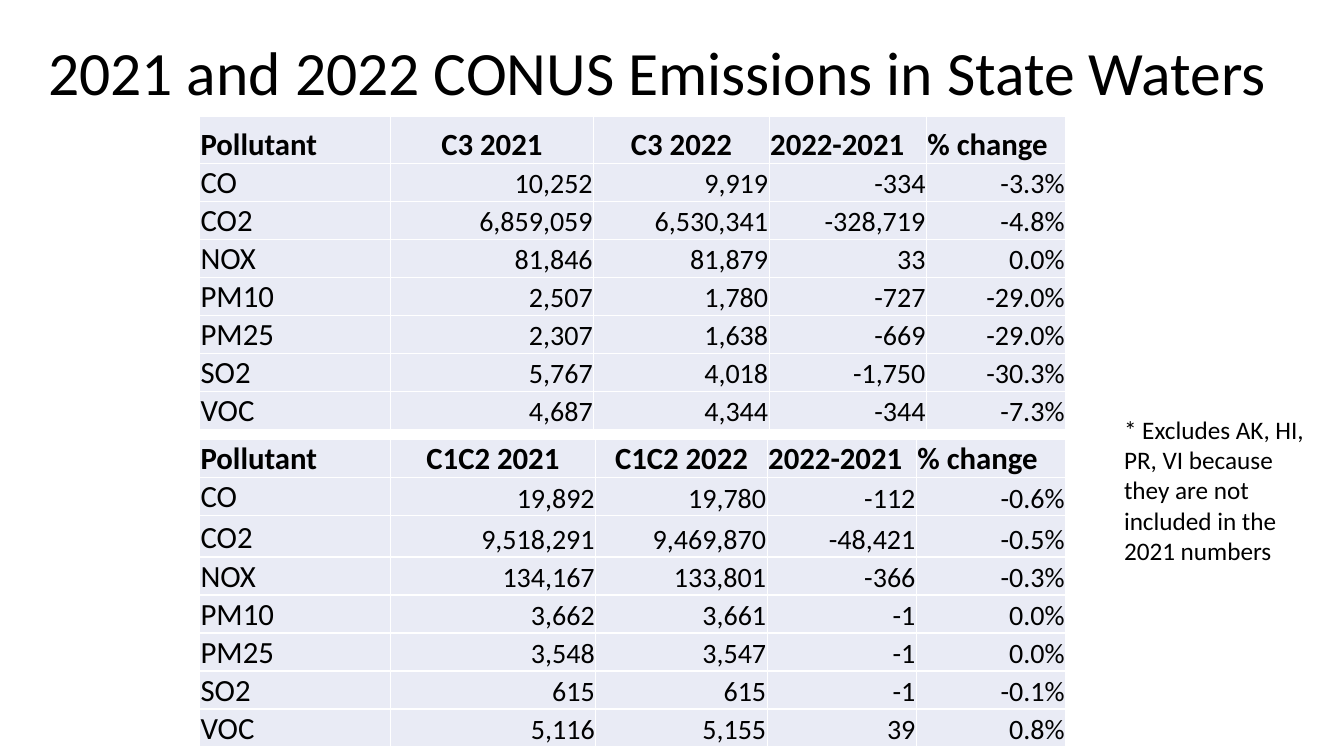
from lxml.etree import SubElement
from pptx import Presentation
from pptx.dml.color import RGBColor
from pptx.enum.text import MSO_ANCHOR, PP_ALIGN
from pptx.oxml.ns import qn
from pptx.util import Pt

PX = 9144
BLACK = RGBColor(0x00, 0x00, 0x00)
WHITE = RGBColor(0xFF, 0xFF, 0xFF)
PALE_BLUE = RGBColor(0xE9, 0xEB, 0xF5)

TITLE = "2021 and 2022 CONUS Emissions in State Waters"
FOOTNOTE = "* Excludes AK, HI, PR, VI because they are not included in the 2021 numbers"
HEADER_ALIGNMENTS = [PP_ALIGN.LEFT, PP_ALIGN.CENTER, PP_ALIGN.CENTER, PP_ALIGN.LEFT, PP_ALIGN.LEFT]
VALUE_ALIGNMENTS = [PP_ALIGN.LEFT] + [PP_ALIGN.RIGHT] * 4

C3_EMISSIONS = [
    ("Pollutant", "C3 2021", "C3 2022", "2022-2021", "% change"),
    ("CO", "10,252", "9,919", "-334", "-3.3%"),
    ("CO2", "6,859,059", "6,530,341", "-328,719", "-4.8%"),
    ("NOX", "81,846", "81,879", "33", "0.0%"),
    ("PM10", "2,507", "1,780", "-727", "-29.0%"),
    ("PM25", "2,307", "1,638", "-669", "-29.0%"),
    ("SO2", "5,767", "4,018", "-1,750", "-30.3%"),
    ("VOC", "4,687", "4,344", "-344", "-7.3%"),
]
C1C2_EMISSIONS = [
    ("Pollutant", "C1C2 2021", "C1C2 2022", "2022-2021", "% change"),
    ("CO", "19,892", "19,780", "-112", "-0.6%"),
    ("CO2", "9,518,291", "9,469,870", "-48,421", "-0.5%"),
    ("NOX", "134,167", "133,801", "-366", "-0.3%"),
    ("PM10", "3,662", "3,661", "-1", "0.0%"),
    ("PM25", "3,548", "3,547", "-1", "0.0%"),
    ("SO2", "615", "615", "-1", "-0.1%"),
    ("VOC", "5,116", "5,155", "39", "0.8%"),
]


def set_format(target, values):
    for name, value in values.items():
        setattr(target, name, value)


def write_text(paragraph, wording, size, bold=False):
    run = paragraph.add_run()
    run.text = wording
    set_format(run.font, {"name": "Calibri", "size": Pt(size), "bold": bold})
    run.font.color.rgb = BLACK


def add_text_region(slide, box, wording, size, anchor, line_spacing):
    region = slide.shapes.add_textbox(*(length * PX for length in box))
    set_format(region.text_frame, {"word_wrap": True, "vertical_anchor": anchor})
    paragraph = region.text_frame.paragraphs[0]
    paragraph.line_spacing = line_spacing
    write_text(paragraph, wording, size)


def add_cell_borders(cell):
    properties = cell._tc.get_or_add_tcPr()
    for side in ("a:lnL", "a:lnR", "a:lnT", "a:lnB"):
        border = SubElement(properties, qn(side), w=str(Pt(1)))
        border_fill = SubElement(border, qn("a:solidFill"))
        SubElement(border_fill, qn("a:srgbClr"), val=str(WHITE))


def fill_cell(cell, wording, size, bold, alignment):
    add_cell_borders(cell)
    cell.fill.solid()
    cell.fill.fore_color.rgb = PALE_BLUE
    set_format(cell, {
        "vertical_anchor": MSO_ANCHOR.BOTTOM,
        "margin_left": PX,
        "margin_right": PX,
        "margin_top": PX,
        "margin_bottom": 0,
    })
    paragraph = cell.text_frame.paragraphs[0]
    paragraph.alignment = alignment
    write_text(paragraph, wording, size, bold)


def add_emissions_table(slide, box, emissions, column_widths, row_heights):
    frame = slide.shapes.add_table(
        len(emissions), len(column_widths), *(length * PX for length in box)
    )
    table = frame.table
    set_format(table, {"first_row": False, "horz_banding": False})
    for column, width in zip(table.columns, column_widths):
        column.width = width * PX
    for row, height in zip(table.rows, row_heights):
        row.height = height * PX
    for row_index, entries in enumerate(emissions):
        is_header = row_index == 0
        alignments = HEADER_ALIGNMENTS if is_header else VALUE_ALIGNMENTS
        for column_index, (wording, alignment) in enumerate(zip(entries, alignments)):
            size = 22 if is_header or column_index == 0 else 20
            fill_cell(table.cell(row_index, column_index), wording, size, is_header, alignment)


def build_emissions_slide(presentation):
    slide = presentation.slides.add_slide(presentation.slide_layouts[6])
    add_text_region(slide, (38, 2, 1258, 145), TITLE, 44, MSO_ANCHOR.MIDDLE, 0.9)
    add_emissions_table(
        slide, (198, 115, 859, 311), C3_EMISSIONS,
        [189, 202, 174, 156, 138], [47, 36, 31] + [37] * 5,
    )
    add_emissions_table(
        slide, (198, 436, 859, 305), C1C2_EMISSIONS,
        [189, 204, 170, 148, 148], [38, 37, 41] + [37] * 5,
    )
    add_text_region(slide, (1105, 406, 204, 162), FOOTNOTE, 18, MSO_ANCHOR.TOP, 1.0)


def main():
    presentation = Presentation()
    set_format(presentation, {"slide_width": 1333 * PX, "slide_height": 750 * PX})
    build_emissions_slide(presentation)
    presentation.save("out.pptx")


if __name__ == "__main__":
    main()
